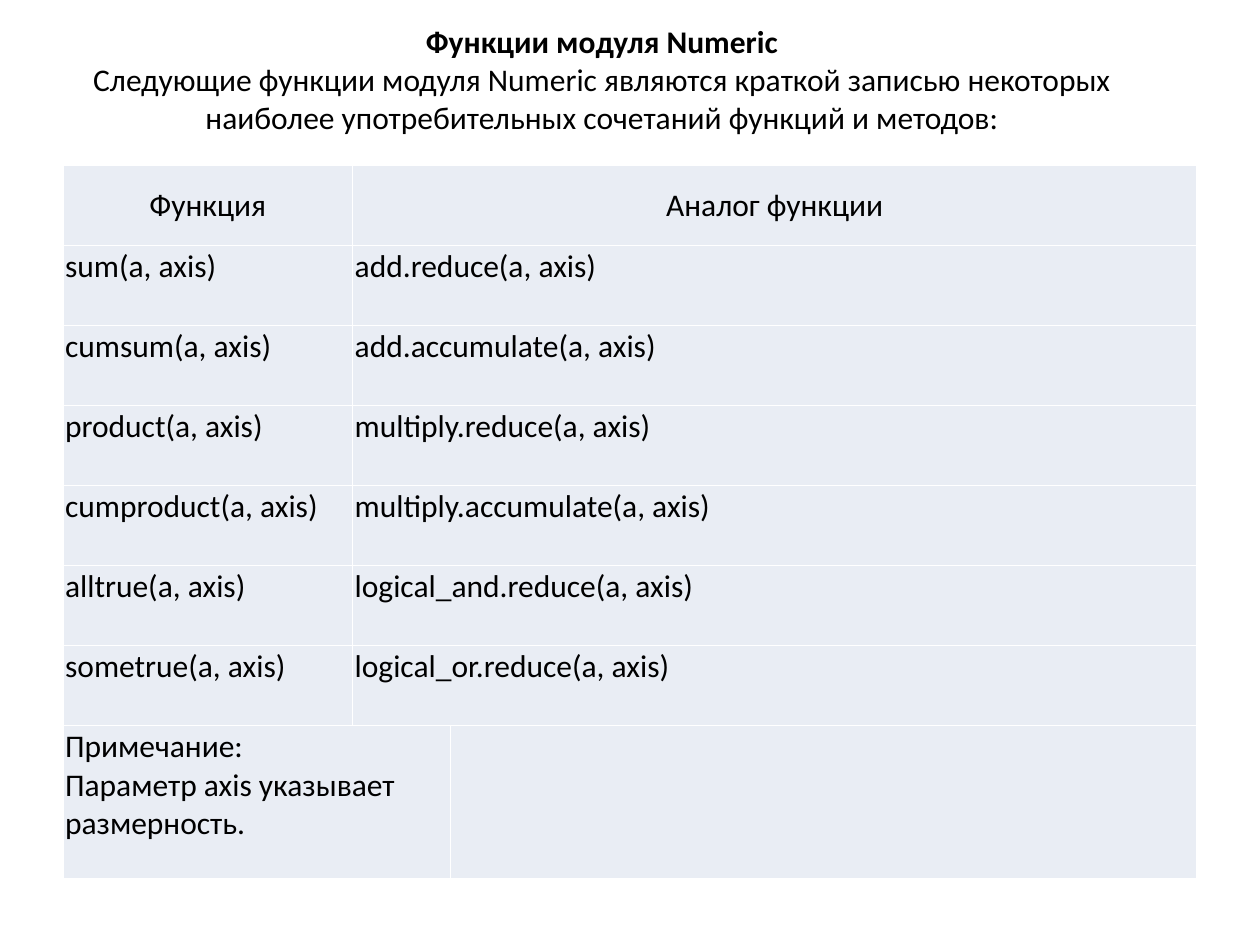
"""Build a slide with a table of Numeric module functions and their equivalents."""
from lxml.etree import SubElement
from pptx import Presentation
from pptx.dml.color import RGBColor
from pptx.enum.text import MSO_ANCHOR, MSO_AUTO_SIZE, PP_ALIGN
from pptx.oxml.ns import qn
from pptx.util import Pt

COLORS = {"text": "000000", "cell": "E9EDF4", "border": "FFFFFF"}
ROWS = [
    ("Функция", "Аналог функции"),
    ("sum(a, axis)", "add.reduce(a, axis)"),
    ("cumsum(a, axis)", "add.accumulate(a, axis)"),
    ("product(a, axis)", "multiply.reduce(a, axis)"),
    ("cumproduct(a, axis)", "multiply.accumulate(a, axis)"),
    ("alltrue(a, axis)", "logical_and.reduce(a, axis)"),
    ("sometrue(a, axis)", "logical_or.reduce(a, axis)"),
]
NOTE = "Примечание:\nПараметр axis указывает размерность."
COL_WIDTHS = [165.5, 56, 426.5]
ROW_HEIGHTS = [45.75] * len(ROWS) + [87.75]


def format_text(tf, align):
    for p in tf.paragraphs:
        p.alignment = align
        for r in p.runs:
            r.font.name = "Calibri"
            r.font.size = Pt(18)
            r.font.bold = False
            r.font.color.rgb = RGBColor.from_string(COLORS["text"])


def format_cell(cell):
    cell.margin_left = cell.margin_right = Pt(1.2)
    cell.margin_top = cell.margin_bottom = Pt(1.2)
    tcPr = cell._tc.get_or_add_tcPr()
    for side in ("a:lnL", "a:lnR", "a:lnT", "a:lnB"):
        ln = SubElement(tcPr, qn(side), w=str(Pt(1)))
        fill = SubElement(ln, qn("a:solidFill"))
        SubElement(fill, qn("a:srgbClr"), val=COLORS["border"])
    cell.fill.solid()
    cell.fill.fore_color.rgb = RGBColor.from_string(COLORS["cell"])


prs = Presentation()
prs.slide_width, prs.slide_height = Pt(720), Pt(540)
s = prs.slides.add_slide(prs.slide_layouts[5])

title = s.shapes.title
title.left, title.top, title.width, title.height = Pt(20), Pt(0), Pt(648), Pt(90)
tf = title.text_frame
tf.text = (
    "Функции модуля Numeric\v"
    "Следующие функции модуля Numeric являются краткой записью "
    "некоторых наиболее употребительных сочетаний функций и методов:"
)
tf.word_wrap = True
tf.auto_size = MSO_AUTO_SIZE.NONE
tf.vertical_anchor = MSO_ANCHOR.MIDDLE
format_text(tf, PP_ALIGN.CENTER)
tf.paragraphs[0].runs[0].font.bold = True

frame = s.shapes.add_table(
    len(ROW_HEIGHTS), len(COL_WIDTHS),
    Pt(36), Pt(94.5), Pt(sum(COL_WIDTHS)), Pt(sum(ROW_HEIGHTS)),
)
table = frame.table
table.first_row = table.horz_banding = False
for column, width in zip(table.columns, COL_WIDTHS):
    column.width = Pt(width)
for row, height in zip(table.rows, ROW_HEIGHTS):
    row.height = Pt(height)
for cell in table.iter_cells():
    format_cell(cell)

for i, texts in enumerate(ROWS):
    table.cell(i, 1).merge(table.cell(i, 2))
    for j, text in enumerate(texts):
        cell = table.cell(i, j)
        cell.text_frame.text = text
        cell.vertical_anchor = MSO_ANCHOR.TOP if i else MSO_ANCHOR.MIDDLE
        format_text(cell.text_frame, PP_ALIGN.LEFT if i else PP_ALIGN.CENTER)

note = table.cell(len(ROWS), 0)
note.merge(table.cell(len(ROWS), 1))
note.text_frame.text = NOTE
format_text(note.text_frame, PP_ALIGN.LEFT)

prs.save("out.pptx")
